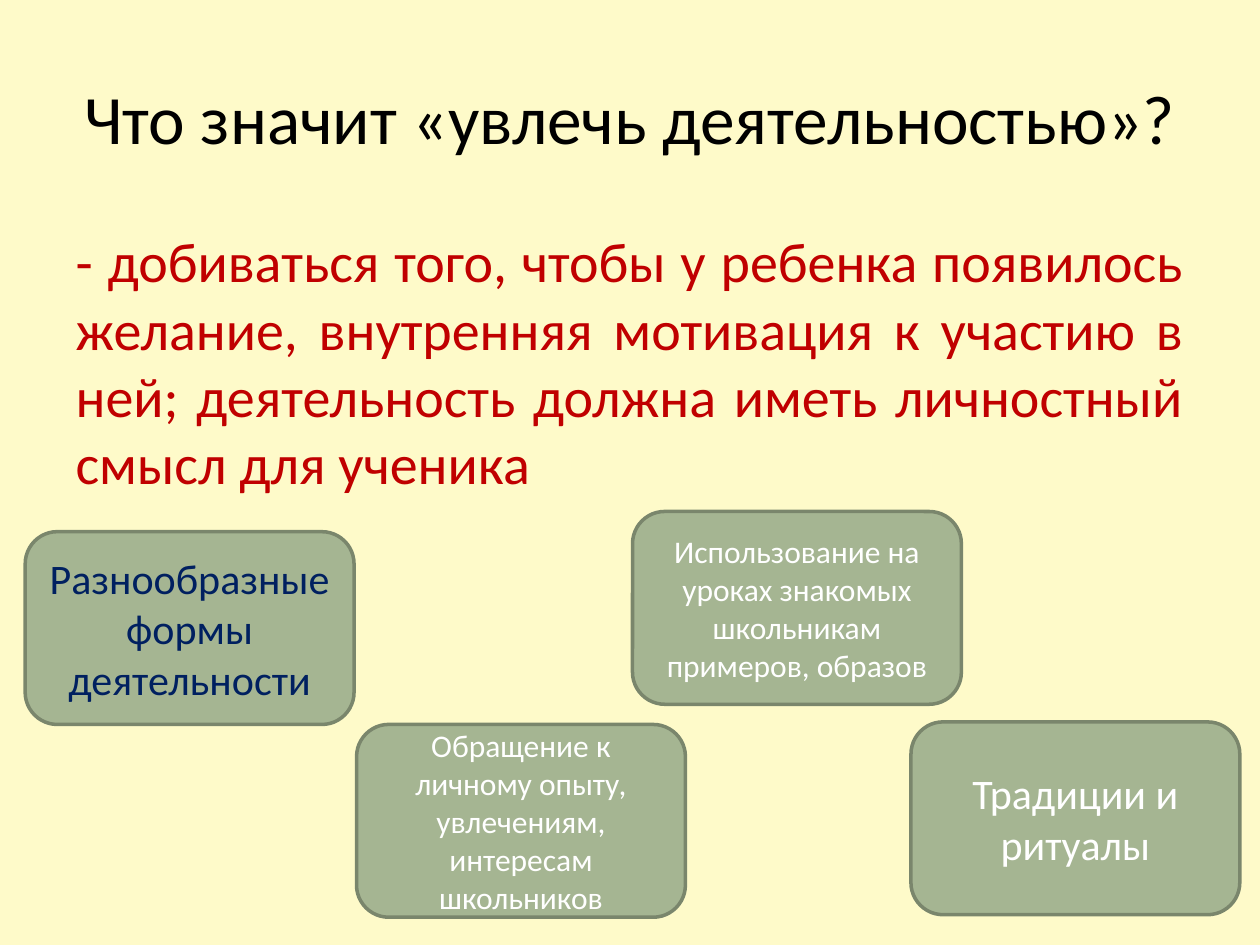
"""Build the slide about engaging pupils in an activity."""
import dataclasses

import lxml.etree
import pptx
import pptx.dml.color
import pptx.enum.shapes
import pptx.enum.text
import pptx.oxml.ns
import pptx.util

EMU_PER_PX = 9144
CARD_WIDTH, CARD_HEIGHT = 261, 153
FONT = "Calibri"
COLORS = {
    "background": "FEFAC9",
    "title": "000000",
    "body": "C00000",
    "card": "A5B592",
    "border": "7A866C",
    "navy": "002060",
    "white": "FFFFFF",
}
ALIGN = pptx.enum.text.PP_ALIGN
ANCHOR = pptx.enum.text.MSO_ANCHOR


@dataclasses.dataclass(frozen=True)
class Card:
    left: int
    top: int
    text: str
    size: int
    color: str = "white"


CARDS = [
    Card(20, 422, "Разнообразные формы деятельности", 24, "navy"),
    Card(283, 575, "Обращение к личному опыту, увлечениям, интересам школьников", 18),
    Card(502, 406, "Использование на уроках знакомых школьникам примеров, образов", 18),
    Card(723, 573, "Традиции и ритуалы", 24),
]


def px(length: int) -> pptx.util.Emu:
    return pptx.util.Emu(length * EMU_PER_PX)


def rgb(name: str) -> pptx.dml.color.RGBColor:
    return pptx.dml.color.RGBColor.from_string(COLORS[name])


def apply_format(target, values: dict) -> None:
    for name, value in values.items():
        setattr(target, name, value)


def place(shape, left: int, top: int, width: int, height: int) -> None:
    apply_format(shape, {"left": px(left), "top": px(top),
                         "width": px(width), "height": px(height)})


def write_text(shape, text: str, size: float, color: str, alignment, anchor) -> None:
    frame = shape.text_frame
    apply_format(frame, {"text": text, "word_wrap": True, "vertical_anchor": anchor,
                         "auto_size": pptx.enum.text.MSO_AUTO_SIZE.NONE})
    paragraph = frame.paragraphs[0]
    apply_format(paragraph, {"alignment": alignment, "space_before": pptx.util.Pt(0)})
    font = paragraph.runs[0].font
    apply_format(font, {"name": FONT, "size": pptx.util.Pt(size)})
    font.color.rgb = rgb(color)


def remove_bullet(paragraph) -> None:
    properties = paragraph._p.get_or_add_pPr()
    properties.set("marL", "0")
    properties.set("indent", "0")
    lxml.etree.SubElement(properties, pptx.oxml.ns.qn("a:buNone"))


def draw_card(slide, card: Card) -> None:
    shape = slide.shapes.add_shape(
        pptx.enum.shapes.MSO_SHAPE.ROUNDED_RECTANGLE,
        px(card.left), px(card.top), px(CARD_WIDTH), px(CARD_HEIGHT))
    shape.shadow.inherit = False
    shape.fill.solid()
    shape.fill.fore_color.rgb = rgb("card")
    shape.line.color.rgb = rgb("border")
    shape.line.width = pptx.util.Pt(2)
    write_text(shape, card.text, card.size, card.color, ALIGN.CENTER, ANCHOR.MIDDLE)


def main() -> None:
    presentation = pptx.Presentation()
    apply_format(presentation, {"slide_width": px(1000), "slide_height": px(750)})
    slide = presentation.slides.add_slide(presentation.slide_layouts[1])
    slide.background.fill.solid()
    slide.background.fill.fore_color.rgb = rgb("background")

    title, body = slide.placeholders
    place(title, 50, 30, 900, 125)
    write_text(title, "Что значит «увлечь деятельностью»?", 39.6, "title",
               ALIGN.CENTER, ANCHOR.MIDDLE)
    place(body, 50, 175, 900, 495)
    write_text(body, "- добиваться того, чтобы у ребенка появилось желание, внутренняя "
               "мотивация к участию в ней; деятельность должна иметь личностный "
               "смысл для ученика", 32, "body", ALIGN.JUSTIFY, ANCHOR.TOP)
    remove_bullet(body.text_frame.paragraphs[0])

    for card in CARDS:
        draw_card(slide, card)
    presentation.save("out.pptx")


if __name__ == "__main__":
    main()
